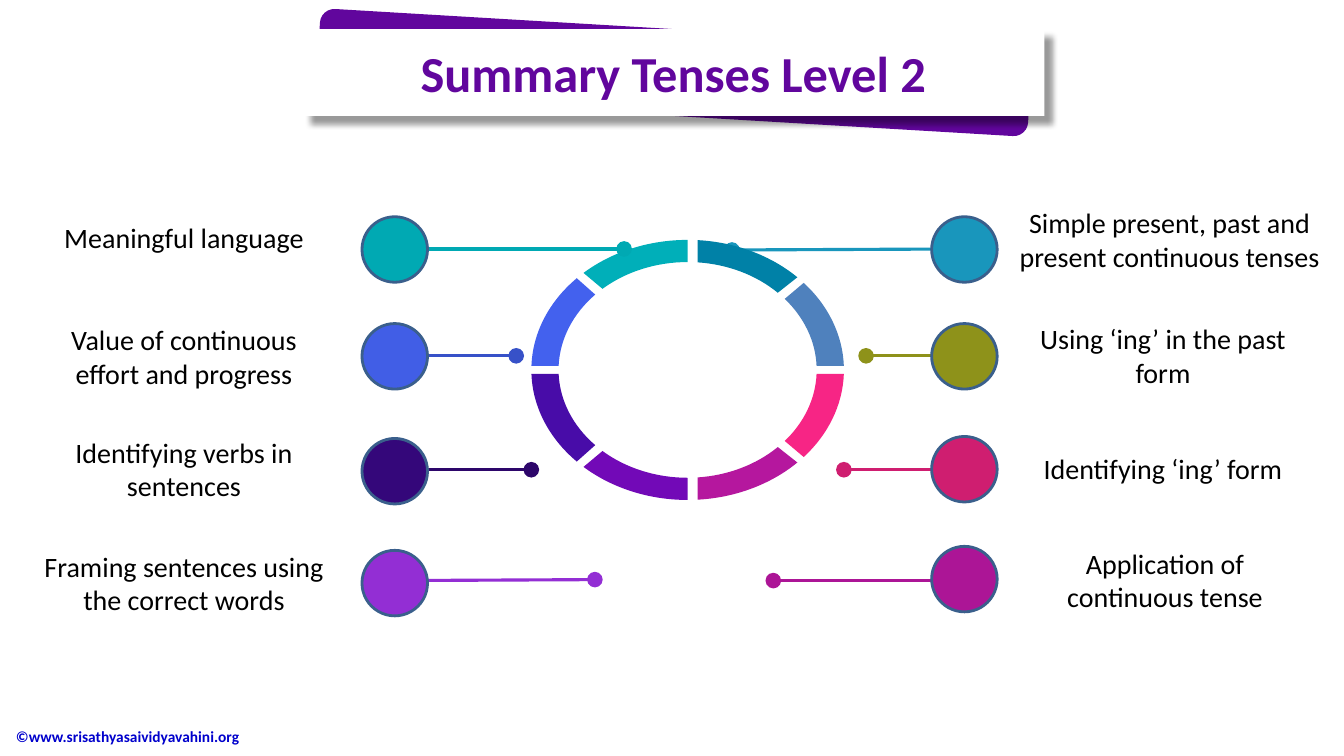
import math

from lxml import etree
from pptx import Presentation
from pptx.dml.color import RGBColor
from pptx.enum.shapes import MSO_CONNECTOR, MSO_SHAPE
from pptx.enum.text import MSO_ANCHOR, PP_ALIGN
from pptx.oxml import parse_xml
from pptx.oxml.ns import nsdecls, qn
from pptx.util import Inches, Pt

LINE = MSO_CONNECTOR.STRAIGHT
OVAL, ROUNDED = MSO_SHAPE.OVAL, MSO_SHAPE.ROUNDED_RECTANGLE
TOP, MIDDLE = MSO_ANCHOR.TOP, MSO_ANCHOR.MIDDLE
LEFT, CENTER = PP_ALIGN.LEFT, PP_ALIGN.CENTER

TITLE = "Summary Tenses Level 2"
COPYRIGHT = "©www.srisathyasaividyavahini.org"
PURPLE, WHITE, BLACK = "61069D", "FFFFFF", "000000"
OUTLINE = "3A5F8C"

# text, text box (left, top, width, height), circle top, circle colour,
# line y at circle, line end (x, y), line colour
LEFT_TOPICS = [
    ("Meaningful language", (0.29, 2.14, 3.07, 0.44),
     2.15, "00A9B3", 2.47, (6.19, 2.47), "00A9B3"),
    ("Value of continuous effort and progress", (0.29, 3.15, 3.07, 0.77),
     3.21, "415EE6", 3.53, (5.12, 3.53), "3751C8"),
    ("Identifying verbs in sentences", (0.29, 4.27, 3.07, 0.77),
     4.35, "34077A", 4.66, (5.27, 4.66), "2D066A"),
    ("Framing sentences using the correct words", (0.29, 5.4, 3.07, 0.77),
     5.46, "932ED4", 5.76, (5.9, 5.75), "932ED4"),
]
RIGHT_TOPICS = [
    ("Simple present, past and present continuous tenses", (10, 1.99, 3.2, 0.77),
     2.15, "1996BC", 2.47, (7.26, 2.48), "1996BC"),
    ("Using ‘ing’ in the past form", (10, 3.14, 3.07, 0.77),
     3.21, "8E921A", 3.53, (8.59, 3.53), "8E921A"),
    ("Identifying ‘ing’ form", (10, 4.43, 3.07, 0.44),
     4.33, "CF1E70", 4.66, (8.37, 4.66), "CF1E70"),
    ("Application of continuous tense", (10.02, 5.37, 3.07, 0.77),
     5.42, "AC1596", 5.76, (7.67, 5.76), "AC1596"),
]
CIRCLE = 0.65
LEFT_CIRCLE_X, RIGHT_CIRCLE_X = 3.59, 9.24

RING_CENTER = (6.82, 3.67)
OUTER_RADII, INNER_RADII = (1.55, 1.29), (1.28, 1.07)
# upper colour, lower colour, outer arc ends, inner arc ends;
# the lower half of the ring mirrors the upper one
RING_SEGMENTS = [
    ("00AFB9", "7209B7", ((6.82, 2.38), (5.79, 2.71)), ((5.97, 2.86), (6.82, 2.6))),
    ("0081A7", "B5179E", ((6.92, 2.38), (7.91, 2.75)), ((7.72, 2.9), (6.92, 2.6))),
    ("4361EE", "480CA8", ((5.72, 2.76), (5.27, 3.63)), ((5.54, 3.63), (5.9, 2.92))),
    ("4F81BD", "F72585", ((7.98, 2.8), (8.37, 3.63)), ((8.11, 3.63), (7.79, 2.96))),
]


def rgb(color):
    return RGBColor.from_string(color)


def inches(*lengths):
    return [Inches(length) for length in lengths]


def paint(shape, fill, outline=None):
    shape.shadow.inherit = False
    shape.fill.solid()
    shape.fill.fore_color.rgb = rgb(fill)
    if outline:
        shape.line.color.rgb = rgb(outline)
        shape.line.width = Pt(2)
    else:
        shape.line.fill.background()


def write(shape, text, color, align=CENTER, anchor=TOP, **font_format):
    frame = shape.text_frame
    frame.word_wrap = True
    frame.vertical_anchor = anchor
    paragraph = frame.paragraphs[0]
    paragraph.text = text
    paragraph.alignment = align
    font = paragraph.runs[0].font
    font.color.rgb = rgb(color)
    for key, value in {"name": "Calibri", **font_format}.items():
        setattr(font, key, value)


def add_banner(slide):
    """Tilted ribbon with the title on a white rounded plate over it."""
    ribbon = slide.shapes.add_shape(ROUNDED, *inches(3.15, 0.29, 7.07, 0.86))
    ribbon.rotation = 3.4
    paint(ribbon, PURPLE)
    title = slide.shapes.title
    title.left, title.top, title.width, title.height = inches(3, 0.29, 7.36, 0.86)
    properties = title._element.spPr
    properties.append(parse_xml(
        f'<a:prstGeom {nsdecls("a")} prst="roundRect"><a:avLst/></a:prstGeom>'))
    paint(title, WHITE)
    properties.find(qn("a:effectLst")).append(parse_xml(
        f'<a:outerShdw {nsdecls("a")} blurRad="{Pt(4)}" dist="{Pt(8)}" dir="2700000" '
        f'algn="tl" rotWithShape="0"><a:srgbClr val="{BLACK}"><a:alpha val="40000"/>'
        '</a:srgbClr></a:outerShdw>'))
    write(title, TITLE, PURPLE, anchor=MIDDLE, size=Pt(36), bold=True)
    ribbon._element.addnext(title._element)


def add_lines(slide, topics, circle_x):
    for _, _, _, _, start_y, end, color in topics:
        start = (circle_x + CIRCLE / 2, start_y)
        line = slide.shapes.add_connector(LINE, *inches(*start, *end))
        line.line.color.rgb = rgb(color)
        line.line.width = Pt(2.25)
        stroke = line.line._get_or_add_ln()
        etree.SubElement(stroke, qn("a:headEnd"), type="triangle")
        etree.SubElement(stroke, qn("a:tailEnd"), type="oval", w="lg", len="lg")
        etree.SubElement(line._element.spPr, qn("a:effectLst"))


def add_circles(slide, topics, circle_x):
    for _, _, top, color, _, _, _ in topics:
        circle = slide.shapes.add_shape(OVAL, *inches(circle_x, top, CIRCLE, CIRCLE))
        paint(circle, color, OUTLINE)


def add_labels(slide, topics):
    for text, box, *_ in topics:
        write(slide.shapes.add_textbox(*inches(*box)), text, BLACK, size=Pt(20))


def arc(ends, radii):
    """Start, two Bezier control points and end of an elliptical arc."""
    (cx, cy), (rx, ry) = RING_CENTER, radii
    first, last = [math.atan2((cy - y) / ry, (x - cx) / rx) for x, y in ends]
    pull = 4 / 3 * math.tan((last - first) / 4)

    def point(angle, along):
        return (cx + rx * (math.cos(angle) - along * math.sin(angle)),
                cy - ry * (math.sin(angle) + along * math.cos(angle)))

    return [point(first, 0), point(first, pull), point(last, -pull), point(last, 0)]


def bend(steps):
    """Turn three straight steps of a path into one Bezier curve."""
    curve = etree.Element(qn("a:cubicBezTo"))
    steps[0].addprevious(curve)
    for step in steps:
        curve.append(step[0])
        step.getparent().remove(step)


def add_ring(slide):
    for upper, lower, outer_ends, inner_ends in RING_SEGMENTS:
        points = arc(outer_ends, OUTER_RADII) + arc(inner_ends, INNER_RADII)
        mirrored = [(x, 2 * RING_CENTER[1] - y) for x, y in points]
        for color, outline in ((upper, points), (lower, mirrored)):
            start, *rest = [inches(*point) for point in outline]
            builder = slide.shapes.build_freeform(*start)
            builder.add_line_segments(rest, close=True)
            segment = builder.convert_to_shape()
            steps = list(segment._element.iter(qn("a:lnTo")))
            bend(steps[:3])
            bend(steps[4:7])
            paint(segment, color)


def main():
    deck = Presentation()
    deck.slide_width, deck.slide_height = inches(13.33, 7.5)
    slide = deck.slides.add_slide(deck.slide_layouts[5])

    footer = slide.shapes.add_textbox(*inches(0.06, 7.1, 3.53, 0.41))
    write(footer, COPYRIGHT, "0000CC", LEFT, MIDDLE, size=Pt(11), bold=True)
    add_lines(slide, RIGHT_TOPICS, RIGHT_CIRCLE_X)
    add_banner(slide)
    add_ring(slide)
    add_circles(slide, RIGHT_TOPICS, RIGHT_CIRCLE_X)
    add_lines(slide, LEFT_TOPICS, LEFT_CIRCLE_X)
    add_circles(slide, LEFT_TOPICS, LEFT_CIRCLE_X)
    add_labels(slide, LEFT_TOPICS + RIGHT_TOPICS)

    deck.save("out.pptx")


if __name__ == "__main__":
    main()
